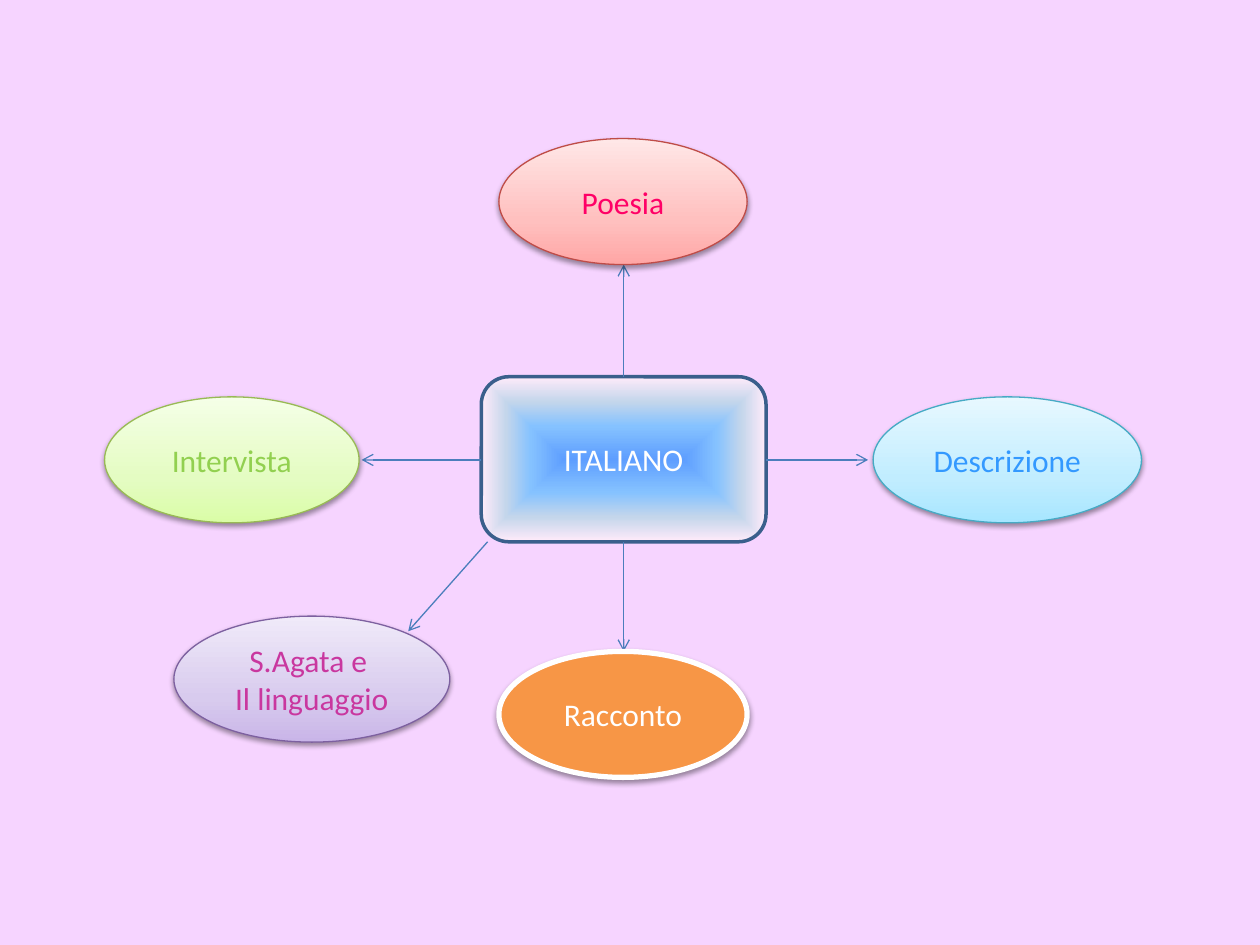
import pptx
import pptx.util
import pptx.dml.color
import pptx.enum.shapes
import pptx.enum.text
import pptx.oxml
import pptx.oxml.ns

Inches = pptx.util.Inches
Pt = pptx.util.Pt
RGBColor = pptx.dml.color.RGBColor
MSO_SHAPE = pptx.enum.shapes.MSO_SHAPE

BACKGROUND = RGBColor(0xF6, 0xD4, 0xFF)
WHITE = RGBColor(0xFF, 0xFF, 0xFF)
ARROW_BLUE = RGBColor(0x4B, 0x7E, 0xBC)
HUB_LINE = RGBColor(0x3A, 0x5F, 0x8C)
RED_LINE, RED_TEXT = RGBColor(0xBF, 0x4C, 0x48), RGBColor(0xFF, 0x00, 0x66)
GREEN_LINE, GREEN_TEXT = RGBColor(0x98, 0xB9, 0x55), RGBColor(0x92, 0xD0, 0x50)
CYAN_LINE, CYAN_TEXT = RGBColor(0x46, 0xAA, 0xC5), RGBColor(0x33, 0x99, 0xFF)
PURPLE_LINE, PURPLE_TEXT = RGBColor(0x7D, 0x60, 0xA0), RGBColor(0xC9, 0x37, 0x9F)
ORANGE = RGBColor(0xF7, 0x96, 0x46)

HUB_STOPS = {0: RGBColor(0x5E, 0x9E, 0xFF), 40: RGBColor(0x85, 0xC2, 0xFF),
             70: RGBColor(0xC4, 0xD6, 0xEB), 100: RGBColor(0xFF, 0xEB, 0xFA)}
RED_STOPS = {0: RGBColor(0xFF, 0xA6, 0xA5), 35: RGBColor(0xFF, 0xC0, 0xBF),
             100: RGBColor(0xFF, 0xE7, 0xE7)}
GREEN_STOPS = {0: RGBColor(0xDA, 0xFD, 0xA7), 35: RGBColor(0xE4, 0xFC, 0xC2),
               100: RGBColor(0xF5, 0xFF, 0xE7)}
CYAN_STOPS = {0: RGBColor(0xA7, 0xE6, 0xFF), 35: RGBColor(0xC1, 0xED, 0xFF),
              100: RGBColor(0xE7, 0xF8, 0xFF)}
PURPLE_STOPS = {0: RGBColor(0xC9, 0xB5, 0xE8), 35: RGBColor(0xD8, 0xCB, 0xEE),
                100: RGBColor(0xF0, 0xEA, 0xF9)}

UPWARD = '<a:lin ang="16200000" scaled="0"/>'
FROM_CENTRE = ('<a:path path="shape"><a:fillToRect l="50000" t="50000" '
               'r="50000" b="50000"/></a:path>')

CENTRE_X, CENTRE_Y = 4.95, 3.65
HUB_LEFT, HUB_TOP, HUB_WIDTH, HUB_HEIGHT = 3.82, 2.99, 2.26, 1.31
HUB_RIGHT, HUB_BOTTOM = HUB_LEFT + HUB_WIDTH, HUB_TOP + HUB_HEIGHT
TOPIC_HEIGHT = 1

# text, left, top, width, fill, line colour, line width, text colour
TOPICS = [
    ("Poesia", 3.96, 1.1, 1.97, RED_STOPS, RED_LINE, 0.75, RED_TEXT),
    ("Intervista", 0.83, 3.15, 2.02, GREEN_STOPS, GREEN_LINE, 0.75, GREEN_TEXT),
    ("Racconto", 3.96, 5.17, 1.97, ORANGE, WHITE, 3, WHITE),
    ("Descrizione", 6.93, 3.15, 2.13, CYAN_STOPS, CYAN_LINE, 0.75, CYAN_TEXT),
    ("S.Agata e \nIl linguaggio", 1.38, 4.89, 2.19, PURPLE_STOPS, PURPLE_LINE,
     0.75, PURPLE_TEXT),
]

# start x, start y, end x, end y
ARROWS = [
    (CENTRE_X, HUB_TOP, CENTRE_X, 2.1),
    (HUB_LEFT, CENTRE_Y, 2.87, CENTRE_Y),
    (CENTRE_X, HUB_BOTTOM, CENTRE_X, 5.17),
    (HUB_RIGHT, CENTRE_Y, 6.89, CENTRE_Y),
    (3.87, HUB_BOTTOM, 3.24, 5.01),
]


def drawing_element(xml):
    """Parse one DrawingML element, adding its namespace."""
    declaration = " " + pptx.oxml.ns.nsdecls("a")
    tag_end = min(xml.index(mark) for mark in " />" if mark in xml)
    return pptx.oxml.parse_xml(xml[:tag_end] + declaration + xml[tag_end:])


def set_gradient(shape, stops, direction):
    stop_xml = "".join(
        f'<a:gs pos="{position * 1000}"><a:srgbClr val="{color}"/></a:gs>'
        for position, color in stops.items())
    gradient = drawing_element(
        f'<a:gradFill rotWithShape="1"><a:gsLst>{stop_xml}</a:gsLst>'
        f'{direction}</a:gradFill>')
    geometry = shape._element.spPr.find(pptx.oxml.ns.qn("a:prstGeom"))
    geometry.addnext(gradient)


def add_soft_shadow(shape):
    effects = shape._element.spPr.find(pptx.oxml.ns.qn("a:effectLst"))
    effects.append(drawing_element(
        f'<a:outerShdw blurRad="{Pt(3.1)}" dist="{Pt(1.6)}" dir="5400000" '
        'rotWithShape="0"><a:srgbClr val="000000"><a:alpha val="38000"/>'
        '</a:srgbClr></a:outerShdw>'))


def set_label(shape, text, color):
    frame = shape.text_frame
    frame.text = text
    frame.word_wrap = True
    frame.vertical_anchor = pptx.enum.text.MSO_ANCHOR.MIDDLE
    for paragraph in frame.paragraphs:
        paragraph.alignment = pptx.enum.text.PP_ALIGN.CENTER
        for run in paragraph.runs:
            run.font.name = "Calibri"
            run.font.size = Pt(18)
            run.font.color.rgb = color


def add_node(slide, kind, box, text, text_color, line_color, line_width):
    shape = slide.shapes.add_shape(kind, *(Inches(length) for length in box))
    shape.shadow.inherit = False
    shape.line.color.rgb = line_color
    shape.line.width = Pt(line_width)
    set_label(shape, text, text_color)
    return shape


def add_hub(slide):
    hub = add_node(slide, MSO_SHAPE.ROUNDED_RECTANGLE,
                   (HUB_LEFT, HUB_TOP, HUB_WIDTH, HUB_HEIGHT),
                   "ITALIANO", WHITE, HUB_LINE, 2)
    set_gradient(hub, HUB_STOPS, FROM_CENTRE)


def add_topic(slide, text, left, top, width, fill, line_color, line_width,
              text_color):
    topic = add_node(slide, MSO_SHAPE.OVAL, (left, top, width, TOPIC_HEIGHT),
                     text, text_color, line_color, line_width)
    if isinstance(fill, dict):
        set_gradient(topic, fill, UPWARD)
    else:
        topic.fill.solid()
        topic.fill.fore_color.rgb = fill
    add_soft_shadow(topic)


def add_arrow(slide, *ends):
    arrow = slide.shapes.add_connector(
        pptx.enum.shapes.MSO_CONNECTOR.STRAIGHT,
        *(Inches(length) for length in ends))
    arrow.line.color.rgb = ARROW_BLUE
    arrow.line.width = Pt(0.75)
    arrow.line._get_or_add_ln().append(drawing_element('<a:tailEnd type="arrow"/>'))
    arrow._element.spPr.append(drawing_element("<a:effectLst/>"))


def main():
    presentation = pptx.Presentation()
    presentation.slide_width = Inches(10)
    presentation.slide_height = Inches(7.5)
    slide = presentation.slides.add_slide(presentation.slide_layouts[6])
    slide.background.fill.solid()
    slide.background.fill.fore_color.rgb = BACKGROUND
    add_hub(slide)
    for arrow, topic in zip(ARROWS, TOPICS):
        add_arrow(slide, *arrow)
        add_topic(slide, *topic)
    presentation.save("out.pptx")


if __name__ == "__main__":
    main()
